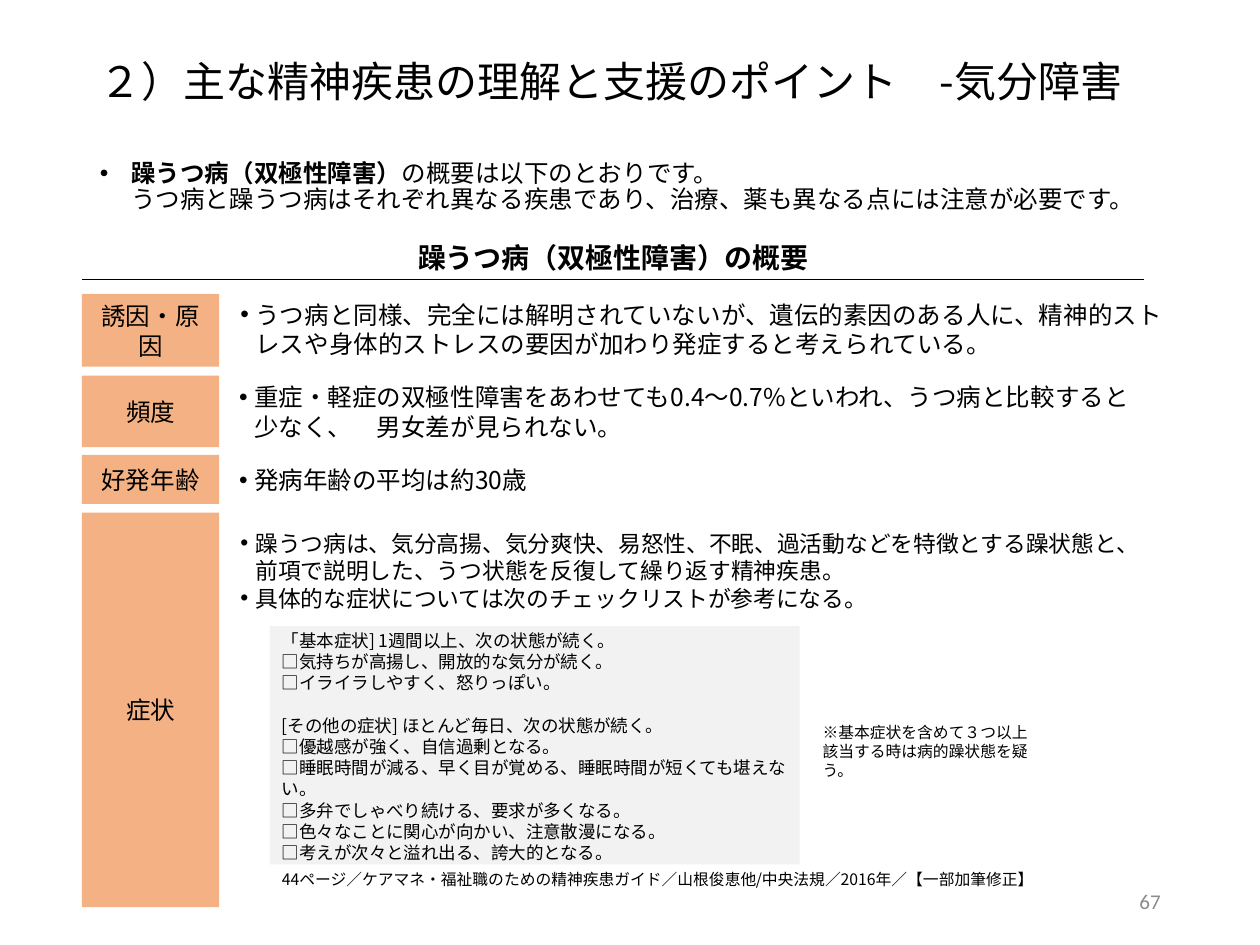
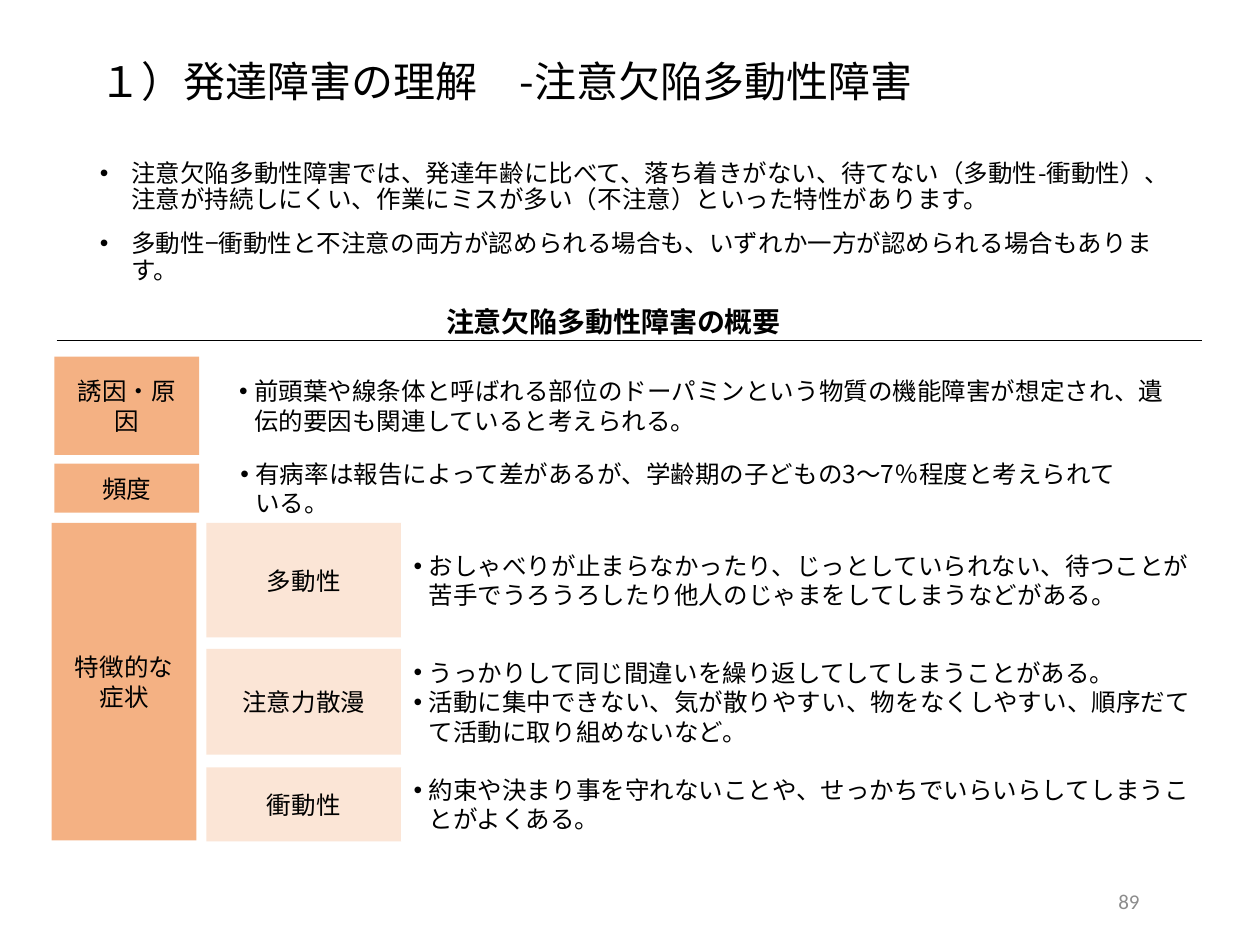
from lxml import etree
from pptx import Presentation
from pptx.dml.color import RGBColor
from pptx.enum.shapes import MSO_CONNECTOR, MSO_SHAPE
from pptx.enum.text import MSO_ANCHOR, PP_ALIGN
from pptx.oxml.ns import qn
from pptx.util import Pt

BLACK = RGBColor(0, 0, 0)
WHITE = RGBColor(255, 255, 255)
GRAY = RGBColor(0x8C, 0x8C, 0x8C)
PALE = RGBColor(0xF2, 0xF2, 0xF2)
ORANGE = RGBColor(0xF4, 0xB1, 0x83)
PEACH = RGBColor(0xFB, 0xE5, 0xD6)
LEFT, CENTER, RIGHT = PP_ALIGN.LEFT, PP_ALIGN.CENTER, PP_ALIGN.RIGHT
TOP, MIDDLE = MSO_ANCHOR.TOP, MSO_ANCHOR.MIDDLE
RECT = MSO_SHAPE.RECTANGLE
LINE = MSO_CONNECTOR.STRAIGHT
FONT = "Noto Sans CJK JP"


def write(shape, paras, size=14, align=LEFT, anchor=MIDDLE, indent=0,
          pitch=1.21, gap=0, bold=False, color=BLACK, font=FONT):
    """Fill a shape with paragraphs; "**" toggles bold, a newline breaks."""
    frame = shape.text_frame
    frame.word_wrap = True
    frame.vertical_anchor = anchor
    for num, text in enumerate(paras):
        para = frame.add_paragraph() if num else frame.paragraphs[0]
        para.alignment = align
        para.line_spacing = Pt(round(size * pitch, 1))
        if num and gap:
            para.space_before = Pt(gap)
        if indent:
            props = para._p.get_or_add_pPr()
            props.set("marL", str(Pt(indent)))
            props.set("indent", str(-Pt(indent)))
            etree.SubElement(props, qn("a:buFont"), typeface="Arial")
            etree.SubElement(props, qn("a:buChar"), char="•")
        for turn, part in enumerate(text.split("**")):
            for row, words in enumerate(part.split("\n")):
                if row:
                    para.add_line_break()
                if not words:
                    continue
                run = para.add_run()
                run.text = words
                run.font.size = Pt(size)
                run.font.bold = bold or turn % 2 == 1
                run.font.color.rgb = color
                run.font.name = font
                etree.SubElement(run._r.get_or_add_rPr(), qn("a:ea"), typeface=font)


def block(slide, at, fill, paras, **style):
    """Draw a filled rectangle without outline and write in it."""
    shape = slide.shapes.add_shape(RECT, *map(Pt, at))
    shape.shadow.inherit = False
    shape.fill.solid()
    shape.fill.fore_color.rgb = fill
    shape.line.fill.background()
    write(shape, paras, **style)
    return shape


deck = Presentation()
deck.slide_width, deck.slide_height = Pt(720), Pt(540)

# title, lead, heading, heading top, rule (left, right, y), page, page width
PAGES = [
    ("２）主な精神疾患の理解と支援のポイント　-気分障害",
     ["**躁うつ病（双極性障害）**の概要は以下のとおりです。\n"
      "うつ病と躁うつ病はそれぞれ異なる疾患であり、治療、薬も異なる点には注意が必要です。"],
     "躁うつ病（双極性障害）の概要", 135.4, (46.8, 653.8, 159.8), "67", 162),
    ("１）発達障害の理解　-注意欠陥多動性障害",
     ["注意欠陥多動性障害では、発達年齢に比べて、落ち着きがない、待てない（多動性-衝動性）、"
      "注意が持続しにくい、作業にミスが多い（不注意）といった特性があります。",
      "多動性−衝動性と不注意の両方が認められる場合も、いずれか一方が認められる場合もあります。"],
     "注意欠陥多動性障害の概要", 172, (32.4, 686.9, 194.4), "89", 150),
]

# label box, label, text box, points
ROWS = [
    [((46.8, 168, 78.5, 41.6), ["誘因・原因"], (130.3, 168.5, 544.3, 39),
      ["うつ病と同様、完全には解明されていないが、遺伝的素因のある人に、"
       "精神的ストレスや身体的ストレスの要因が加わり発症すると考えられている。"]),
     ((46.8, 214.6, 78.5, 41), ["頻度"], (129.6, 214.6, 523.4, 41),
      ["重症・軽症の双極性障害をあわせても0.4～0.7%といわれ、"
       "うつ病と比較すると少なく、　男女差が見られない。"]),
     ((46.8, 260, 78.5, 28), ["好発年齢"], (129.6, 260, 523.4, 28),
      ["発病年齢の平均は約30歳"])],
    [((31, 203.8, 82.8, 56.2), ["誘因・原因"], (129.6, 203.8, 544.3, 56.2),
      ["前頭葉や線条体と呼ばれる部位のドーパミンという物質の機能障害が想定され、"
       "遺伝的要因も関連していると考えられる。"]),
     ((31, 265, 82.8, 28), ["頻度"], (130.3, 265, 523.4, 28),
      ["有病率は報告によって差があるが、学齢期の子どもの3～7％程度と考えられている。"])],
]

slides = []
for (title, lead, head, top, rule, page, wide), rows in zip(PAGES, ROWS):
    slide = deck.slides.add_slide(deck.slide_layouts[6])
    slides.append(slide)
    add = slide.shapes.add_textbox
    write(add(Pt(50), Pt(15), Pt(621), Pt(62)), [title], size=24)
    write(add(Pt(50), Pt(88.5), Pt(621), Pt(440)), lead,
          anchor=TOP, indent=18, pitch=1.08, gap=10)
    block(slide, (46.8, top, 607.7, 23), WHITE, [head], size=16, align=CENTER, bold=True)
    start, end, level = map(Pt, rule)
    line = slide.shapes.add_connector(LINE, start, level, end, level)
    line.line.color.rgb = BLACK
    line.line.width = Pt(0.5)
    etree.SubElement(line._element.spPr, qn("a:effectLst"))
    for spot, label, area, points in rows:
        block(slide, spot, ORANGE, label, align=CENTER)
        block(slide, area, WHITE, points, indent=8.6)

mood, focus = slides

# Symptoms and checklist of the first slide
block(mood, (46.8, 293, 78.5, 225.4), ORANGE, ["症状"], align=CENTER)
signs = block(mood, (130.3, 293, 540, 219.6), WHITE, [
    "躁うつ病は、気分高揚、気分爽快、易怒性、不眠、過活動などを特徴とする躁状態と、"
    "前項で説明した、うつ状態を反復して繰り返す精神疾患。",
    "具体的な症状については次のチェックリストが参考になる。",
], size=13, anchor=TOP, indent=8.6)
signs.text_frame.margin_top = Pt(9.5)
checks = block(mood, (154, 357.8, 303, 137.5), PALE, [
    "「基本症状] 1週間以上、次の状態が続く。",
    "□気持ちが高揚し、開放的な気分が続く。",
    "□イライラしやすく、怒りっぽい。",
    "[その他の症状] ほとんど毎日、次の状態が続く。",
    "□優越感が強く、自信過剰となる。",
    "□睡眠時間が減る、早く目が覚める、睡眠時間が短くても堪えない。",
    "□多弁でしゃべり続ける、要求が多くなる。",
    "□色々なことに関心が向かい、注意散漫になる。",
    "□考えが次々と溢れ出る、誇大的となる。",
], size=10)
checks.text_frame.paragraphs[3].space_before = Pt(12.1)
block(mood, (463, 357.8, 134.6, 143.3), WHITE,
      ["※基本症状を含めて３つ以上", "該当する時は病的躁状態を疑う。"], size=9)
block(mood, (154, 494, 454.3, 17.3), WHITE,
      ["44ページ／ケアマネ・福祉職のための精神疾患ガイド／"
       "山根俊恵他/中央法規／2016年／【一部加筆修正】"], size=9)

# Traits of the second slide
block(focus, (29.5, 298.8, 82.8, 181.4), ORANGE, ["特徴的な", "症状"], align=CENTER)
TRAITS = [
    (298.8, 65.5, "多動性",
     ["おしゃべりが止まらなかったり、じっとしていられない、"
      "待つことが苦手でうろうろしたり他人のじゃまをしてしまうなどがある。"]),
    (370.8, 60.5, "注意力散漫",
     ["うっかりして同じ間違いを繰り返してしてしまうことがある。",
      "活動に集中できない、気が散りやすい、物をなくしやすい、"
      "順序だてて活動に取り組めないなど。"]),
    (438.5, 42.3, "衝動性",
     ["約束や決まり事を守れないことや、せっかちでいらいらしてしまうことがよくある。"]),
]
for top, tall, label, points in TRAITS:
    block(focus, (118, top, 111.3, tall), PEACH, [label], align=CENTER)
    block(focus, (229.3, top, 460, tall), WHITE, points, indent=8.6)

# Page numbers lie on top of the white boxes
for slide, (*_, page, wide) in zip(slides, PAGES):
    spot = slide.shapes.add_textbox(Pt(508.3), Pt(500.5), Pt(wide), Pt(28.8))
    write(spot, [page], size=12, align=RIGHT, color=GRAY, font="Calibri")

deck.save("out.pptx")
